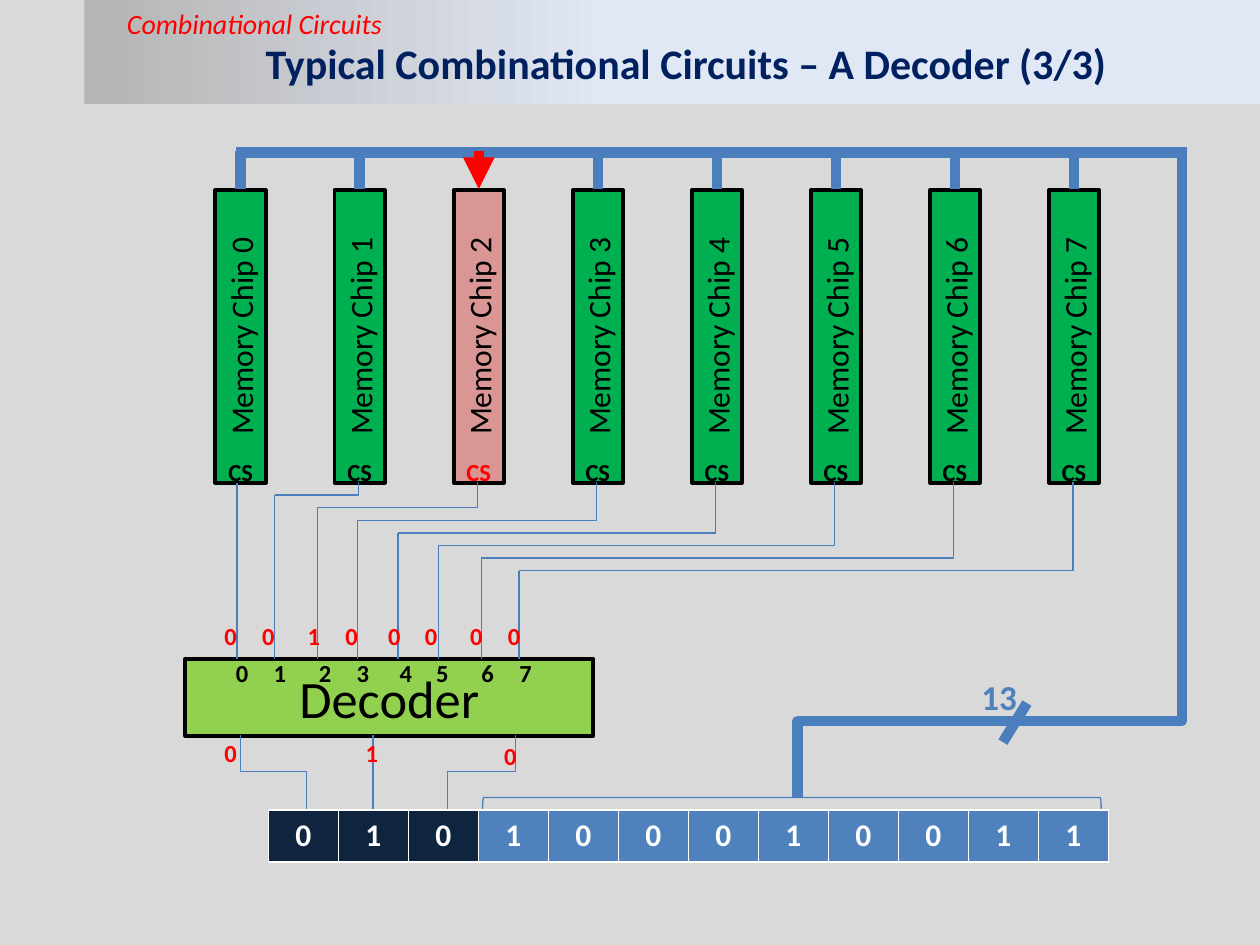
from dataclasses import dataclass

from lxml import etree
from pptx import Presentation
from pptx.dml.color import RGBColor
from pptx.enum.shapes import MSO_CONNECTOR, MSO_SHAPE
from pptx.enum.text import MSO_ANCHOR, MSO_AUTO_SIZE, PP_ALIGN
from pptx.oxml.ns import qn
from pptx.util import Inches, Pt

STRAIGHT, ELBOW = MSO_CONNECTOR.STRAIGHT, MSO_CONNECTOR.ELBOW
RECT, BRACKET = MSO_SHAPE.RECTANGLE, MSO_SHAPE.RIGHT_BRACKET
LEFT, CENTER = PP_ALIGN.LEFT, PP_ALIGN.CENTER
MIDDLE = MSO_ANCHOR.MIDDLE
GROW = MSO_AUTO_SIZE.SHAPE_TO_FIT_TEXT

BLACK, WHITE, RED = "000000", "FFFFFF", "FF0000"
WIRE, BLUE, NAVY = "4B7EBC", "4F81BD", "0F243E"
GREEN, PINK, LIME = "00B050", "D99694", "92D050"
THIN, THICK = 0.75, 6

ACTIVE = 2
CHIP_X, CHIP_STEP, CHIP_END = 1.91, 0.945, 3.83
BUS_Y = 1.2
BITS = "010100010011"
PICK_BITS = 3
PORTS = [1.8, 2.1, 2.46, 2.76, 3.1, 3.39, 3.75, 4.05]
WIRES = [1.88, 2.18, 2.52, 2.84, 3.16, 3.48, 3.82, 4.12]


@dataclass
class Label:
    text: str
    left: float
    top: float
    width: float = 0.17
    height: float = 0.34
    color: str = BLACK
    size: float = 14
    bold: bool = True
    italic: bool = False
    align: PP_ALIGN = CENTER


@dataclass
class Line:
    x1: float
    y1: float
    x2: float
    y2: float
    width: float = THIN
    color: str = WIRE


def rgb(code: str) -> RGBColor:
    return RGBColor.from_string(code)


def write(frame, text: str, size: float, color: str, bold=False, italic=False, align=CENTER):
    frame.text = text
    para = frame.paragraphs[0]
    para.alignment = align
    font = para.runs[0].font
    font.name, font.size = "Calibri", Pt(size)
    font.bold, font.italic = bold, italic
    font.color.rgb = rgb(color)


def add_label(slide, label: Label):
    box = slide.shapes.add_textbox(
        Inches(label.left), Inches(label.top), Inches(label.width), Inches(label.height))
    frame = box.text_frame
    frame.word_wrap = True
    frame.auto_size = GROW
    write(frame, label.text, label.size, label.color, label.bold, label.italic, label.align)


def add_box(slide, left, top, width, height, fill, text, size, turn=0):
    box = slide.shapes.add_shape(RECT, Inches(left), Inches(top), Inches(width), Inches(height))
    box.shadow.inherit = False
    box.rotation = turn
    box.fill.solid()
    box.fill.fore_color.rgb = rgb(fill)
    box.line.color.rgb = rgb(BLACK)
    box.line.width = Pt(2.25)
    write(box.text_frame, text, size, BLACK)
    return box


def add_line(slide, line: Line, kind=STRAIGHT):
    link = slide.shapes.add_connector(
        kind, Inches(line.x1), Inches(line.y1), Inches(line.x2), Inches(line.y2))
    link.line.color.rgb = rgb(line.color)
    link.line.width = Pt(line.width)
    etree.SubElement(link._element.spPr, qn("a:effectLst"))
    return link


def add_corner(slide, line: Line):
    """Draw a wire that runs across, then up, with one bend."""
    link = add_line(slide, line, ELBOW)
    link._element.spPr.find(qn("a:prstGeom")).set("prst", "bentConnector2")


def add_step(slide, line: Line, bend=0.5):
    """Draw a wire that runs up, across and up; bend is the share of the rise before the turn."""
    mid_x, mid_y = (line.x1 + line.x2) / 2, (line.y1 + line.y2) / 2
    rise, run = line.y1 - line.y2, line.x2 - line.x1
    flat = Line(mid_x - rise / 2, mid_y - run / 2, mid_x + rise / 2, mid_y + run / 2,
                line.width, line.color)
    link = add_line(slide, flat, ELBOW)
    props = link._element.spPr
    props.find(qn("a:xfrm")).set("rot", str(270 * 60000))
    guides = props.find(qn("a:prstGeom")).find(qn("a:avLst"))
    etree.SubElement(guides, qn("a:gd"), name="adj1", fmla=f"val {round(bend * 100000)}")


def add_header(slide):
    banner = slide.shapes.add_shape(RECT, Inches(0.67), 0, Inches(9.33), Inches(0.83))
    banner.shadow.inherit = False
    banner.line.fill.background()
    banner.fill.gradient()
    banner.fill.gradient_angle = 0
    for stop, (place, color) in zip(banner.fill.gradient_stops, [(0.01, "B5B5B5"), (0.45, "E1E8F5")]):
        stop.position = place
        stop.color.rgb = rgb(color)
    slide.shapes._spTree.insert(2, banner._element)

    title = slide.shapes.title
    title.left, title.top = Inches(0.9), Inches(0.25)
    title.width, title.height = Inches(9.09), Inches(0.5)
    title.text_frame.vertical_anchor = MIDDLE
    write(title.text_frame, "Typical Combinational Circuits – A Decoder (3/3)", 24, "002060", True)
    add_label(slide, Label("Combinational Circuits", 0.91, 0, 3.26, 0.33, RED, 16,
                           False, True, LEFT))


def add_chip(slide, index: int):
    """Draw one memory chip with its drop from the bus and its wire to the decoder."""
    mid = CHIP_X + CHIP_STEP * index
    active = index == ACTIVE
    chip = add_box(slide, mid - 1.16, 2.47, 2.32, 0.4, PINK if active else GREEN,
                   f"Memory Chip {index}", 18, 270)
    drop = add_line(slide, Line(mid, BUS_Y, mid, 1.5, THICK, RED if active else WIRE))
    drop.end_connect(chip, 3)
    # The join ignores the chip's turn, so the end is set again.
    drop.end_x, drop.end_y = Inches(mid), Inches(1.5)
    if active:
        etree.SubElement(drop._element.spPr.find(qn("a:ln")), qn("a:tailEnd"), type="triangle")

    wire, level = WIRES[index], CHIP_END + 0.1 * index
    add_line(slide, Line(wire, 5.23, wire, level))
    if index:
        add_corner(slide, Line(wire, level, mid - 0.01, CHIP_END))
    port = PORTS[index]
    add_label(slide, Label(str(index), port, 5.17))
    add_label(slide, Label("CS", mid - 0.23, 3.58, 0.46, color=RED if active else BLACK))
    add_label(slide, Label("1" if active else "0", port - 0.09, 4.88, color=RED))


def add_bits(slide):
    table = slide.shapes.add_table(
        1, len(BITS), Inches(2.13), Inches(6.43), Inches(6.67), Inches(0.41)).table
    for index, bit in enumerate(BITS):
        cell = table.cell(0, index)
        cell.fill.solid()
        cell.fill.fore_color.rgb = rgb(NAVY if index < PICK_BITS else BLUE)
        write(cell.text_frame, bit, 18, WHITE, True)


def add_bus(slide):
    brace = slide.shapes.add_shape(BRACKET, Inches(6.24), Inches(3.92), Inches(0.09), Inches(4.91))
    brace.shadow.inherit = False
    brace.rotation = 270
    brace.fill.background()
    brace.line.color.rgb = rgb(WIRE)
    brace.line.width = Pt(THIN)
    add_step(slide, Line(6.33, 6.33, 9.38, 1.17, THICK), 0.118)
    add_line(slide, Line(9.37, 1.21, 1.87, 1.21, THICK))
    add_line(slide, Line(8.15, 5.58, 7.96, 5.89, THICK))
    add_label(slide, Label("13", 7.69, 5.31, 0.74, 0.44, BLUE, 20, align=LEFT))


def main():
    deck = Presentation()
    deck.slide_width, deck.slide_height = Inches(10), Inches(7.5)
    slide = deck.slides.add_slide(deck.slide_layouts[5])
    slide.background.fill.solid()
    slide.background.fill.fore_color.rgb = rgb("D9D9D9")
    add_header(slide)
    add_box(slide, 1.47, 5.23, 3.24, 0.61, LIME, "Decoder", 30)
    add_bits(slide)
    add_bus(slide)
    for index in range(len(PORTS)):
        add_chip(slide, index)

    add_step(slide, Line(2.43, 6.42, 1.91, 5.83))
    add_line(slide, Line(2.96, 6.42, 2.96, 5.83))
    add_step(slide, Line(3.55, 6.42, 4.09, 5.83))
    for bit, left, top in zip(BITS, [1.71, 2.83, 3.93], [5.81, 5.81, 5.83]):
        add_label(slide, Label(bit, left, top, color=RED))
    deck.save("out.pptx")


if __name__ == "__main__":
    main()
